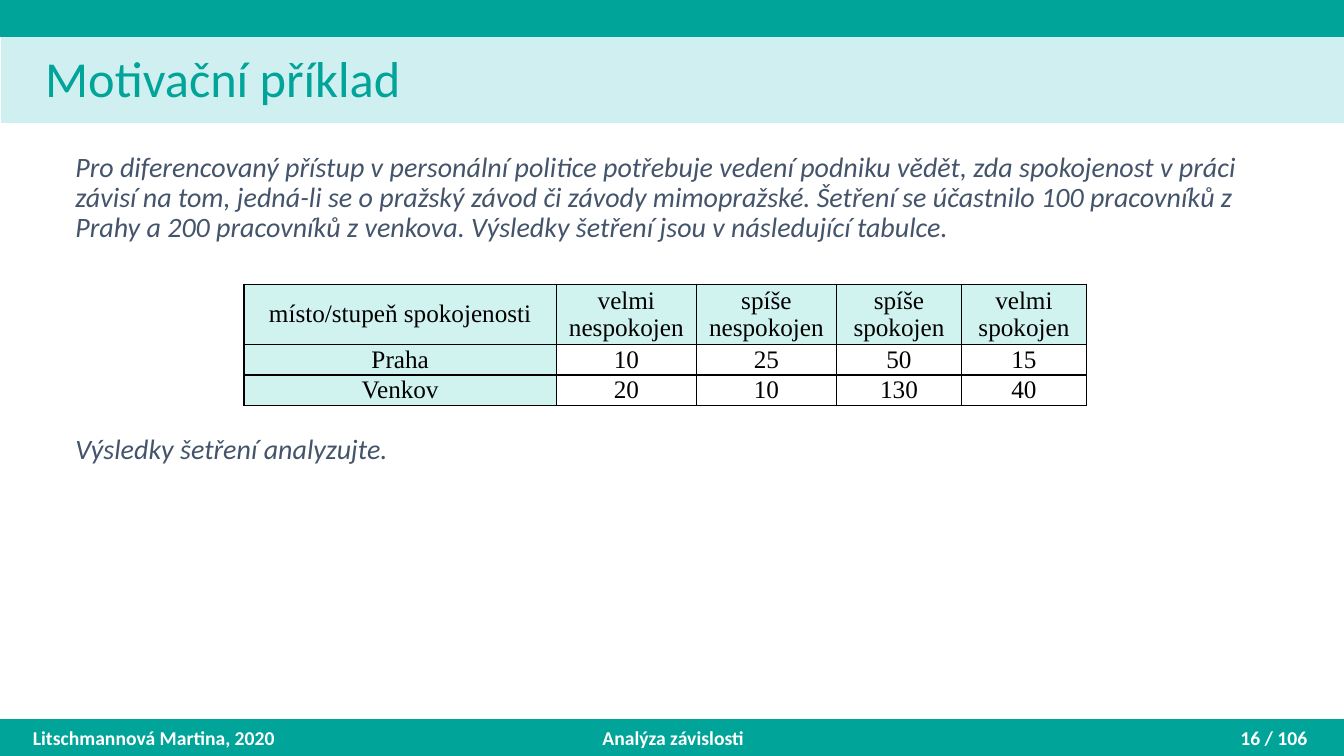
from lxml import etree
from pptx import Presentation
from pptx.dml.color import RGBColor
from pptx.enum.shapes import MSO_SHAPE
from pptx.enum.text import MSO_ANCHOR, PP_ALIGN
from pptx.oxml.ns import qn
from pptx.util import Cm, Pt

RECT = MSO_SHAPE.RECTANGLE
TOP, MIDDLE = MSO_ANCHOR.TOP, MSO_ANCHOR.MIDDLE
LEFT, CENTER, RIGHT = PP_ALIGN.LEFT, PP_ALIGN.CENTER, PP_ALIGN.RIGHT

TEAL = RGBColor(0x00, 0xA4, 0x99)
PALE_BLUE = RGBColor(0xD0, 0xEF, 0xF0)
MINT = RGBColor(0xD1, 0xF3, 0xEF)
SLATE = RGBColor(0x44, 0x54, 0x6A)
WHITE = RGBColor(0xFF, 0xFF, 0xFF)
BLACK = RGBColor(0x00, 0x00, 0x00)

WIDTH, HEIGHT, BAR = 33.87, 19.05, 0.91
FOOTER_TOP = HEIGHT - BAR

INTRO = (
    "Pro diferencovaný přístup v personální politice potřebuje vedení podniku vědět, "
    "zda spokojenost v práci závisí na tom, jedná-li se o pražský závod či závody "
    "mimopražské. Šetření se účastnilo 100 pracovníků z Prahy a 200 pracovníků "
    "z venkova. Výsledky šetření jsou v následující tabulce."
)
SURVEY = [
    ["místo/stupeň spokojenosti", "velmi nespokojen", "spíše nespokojen",
     "spíše spokojen", "velmi spokojen"],
    ["Praha", "10", "25", "50", "15"],
    ["Venkov", "20", "10", "130", "40"],
]
FOOTERS = [
    ("Litschmannová Martina, 2020", 0.58, 7.62, LEFT),
    ("Analýza závislosti", 11.25, 11.43, CENTER),
    ("16 / 106", 25.58, 7.62, RIGHT),
]


def write(tf, text, size, color, font="Calibri", bold=False, italic=False,
          align=LEFT, spacing=1.0):
    p = tf.paragraphs[0]
    p.alignment = align
    p.line_spacing = spacing
    r = p.add_run()
    r.text = text
    r.font.name = font
    r.font.size = Pt(size)
    r.font.bold = bold
    r.font.italic = italic
    r.font.color.rgb = color


class SlideBuilder:
    table_font = "Times New Roman"
    table_size = 18

    def __init__(self, slide):
        self.s = slide

    def band(self, left, top, height, color, line_width):
        sp = self.s.shapes.add_shape(RECT, Cm(left), Cm(top), Cm(WIDTH), Cm(height))
        sp.shadow.inherit = False
        sp.fill.solid()
        sp.fill.fore_color.rgb = color
        sp.line.color.rgb = color
        sp.line.width = Pt(line_width)

    def text(self, text, left, top, width, height, anchor=TOP, **style):
        sp = self.s.shapes.add_textbox(Cm(left), Cm(top), Cm(width), Cm(height))
        tf = sp.text_frame
        tf.word_wrap = True
        tf.vertical_anchor = anchor
        write(tf, text, **style)

    def borders(self, cell):
        tc_pr = cell._tc.get_or_add_tcPr()
        for side in ("a:lnL", "a:lnR", "a:lnT", "a:lnB"):
            ln = etree.SubElement(tc_pr, qn(side), w=str(Pt(1)))
            fill = etree.SubElement(ln, qn("a:solidFill"))
            etree.SubElement(fill, qn("a:srgbClr"), val=str(BLACK))

    def table(self, rows, left, top, col_widths, row_heights):
        frame = self.s.shapes.add_table(
            len(rows), len(col_widths), Cm(left), Cm(top),
            Cm(sum(col_widths)), Cm(sum(row_heights)))
        table = frame.table
        table.first_row = False
        table.horz_banding = False
        for column, width in zip(table.columns, col_widths):
            column.width = Cm(width)
        for row, height in zip(table.rows, row_heights):
            row.height = Cm(height)
        for i, values in enumerate(rows):
            for j, value in enumerate(values):
                cell = table.cell(i, j)
                cell.margin_left = cell.margin_right = Cm(0.12)
                cell.margin_top = cell.margin_bottom = 0
                cell.vertical_anchor = MIDDLE
                self.borders(cell)
                if i == 0 or j == 0:
                    cell.fill.solid()
                    cell.fill.fore_color.rgb = MINT
                else:
                    cell.fill.background()
                write(cell.text_frame, value, self.table_size, BLACK,
                      font=self.table_font, align=CENTER)


def main():
    prs = Presentation()
    prs.slide_width, prs.slide_height = Cm(WIDTH), Cm(HEIGHT)
    page = SlideBuilder(prs.slides.add_slide(prs.slide_layouts[6]))

    page.band(0, FOOTER_TOP, BAR, TEAL, 1)
    page.band(0.03, BAR, 2.18, PALE_BLUE, 0.75)
    page.band(0, 0, BAR, TEAL, 1)

    page.text("Motivační příklad", 0.89, 1.02, 30.18, 2.06, anchor=MIDDLE,
              size=36, color=TEAL, spacing=0.9)
    for text, top, height in ((INTRO, 3.73, 2.8),
                              ("Výsledky šetření analyzujte.", 10.85, 1.1)):
        page.text(text, 1.65, top, 30.91, height,
                  size=20, color=SLATE, italic=True, spacing=0.9)
    page.table(SURVEY, 6.15, 7.16, [7.87, 3.53, 3.53, 3.15, 3.15], [1.4, 0.7, 0.7])
    for text, left, width, align in FOOTERS:
        page.text(text, left, FOOTER_TOP, width, BAR, anchor=MIDDLE,
                  size=14, color=WHITE, bold=True, align=align)

    prs.save("out.pptx")


if __name__ == "__main__":
    main()
